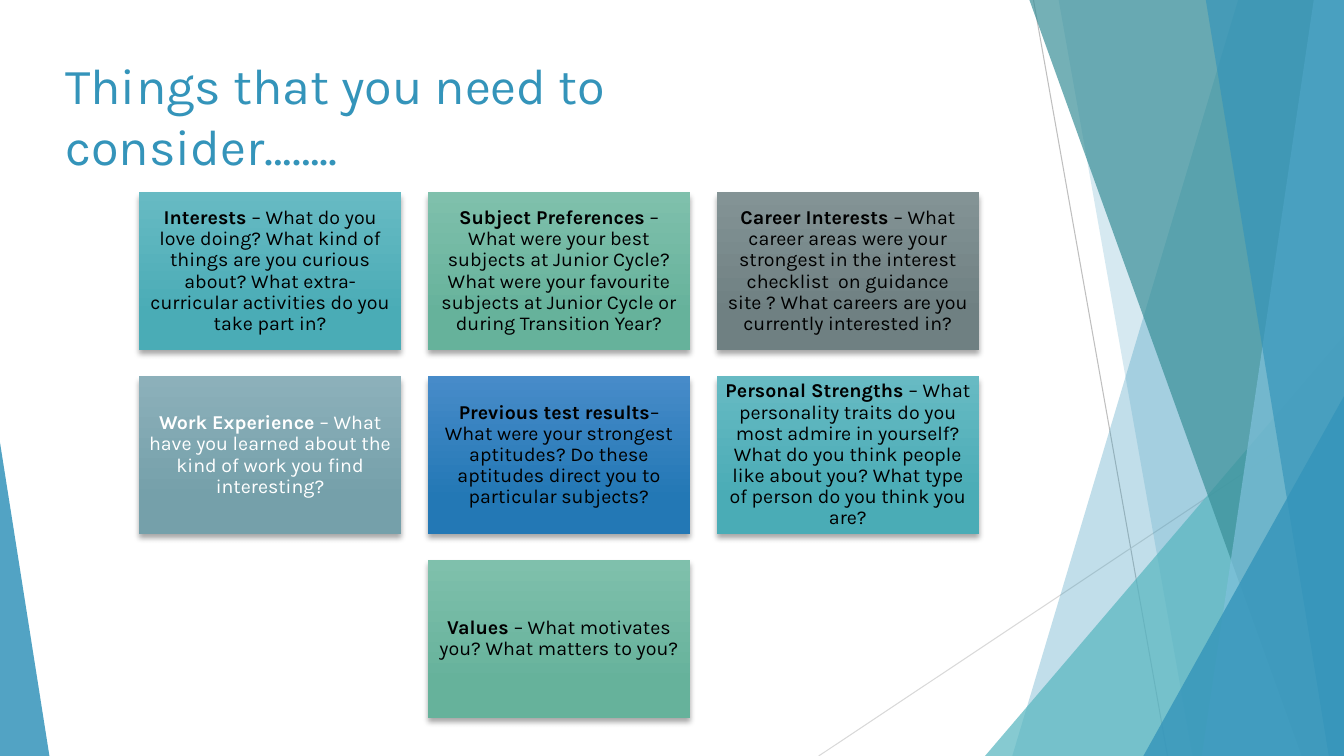
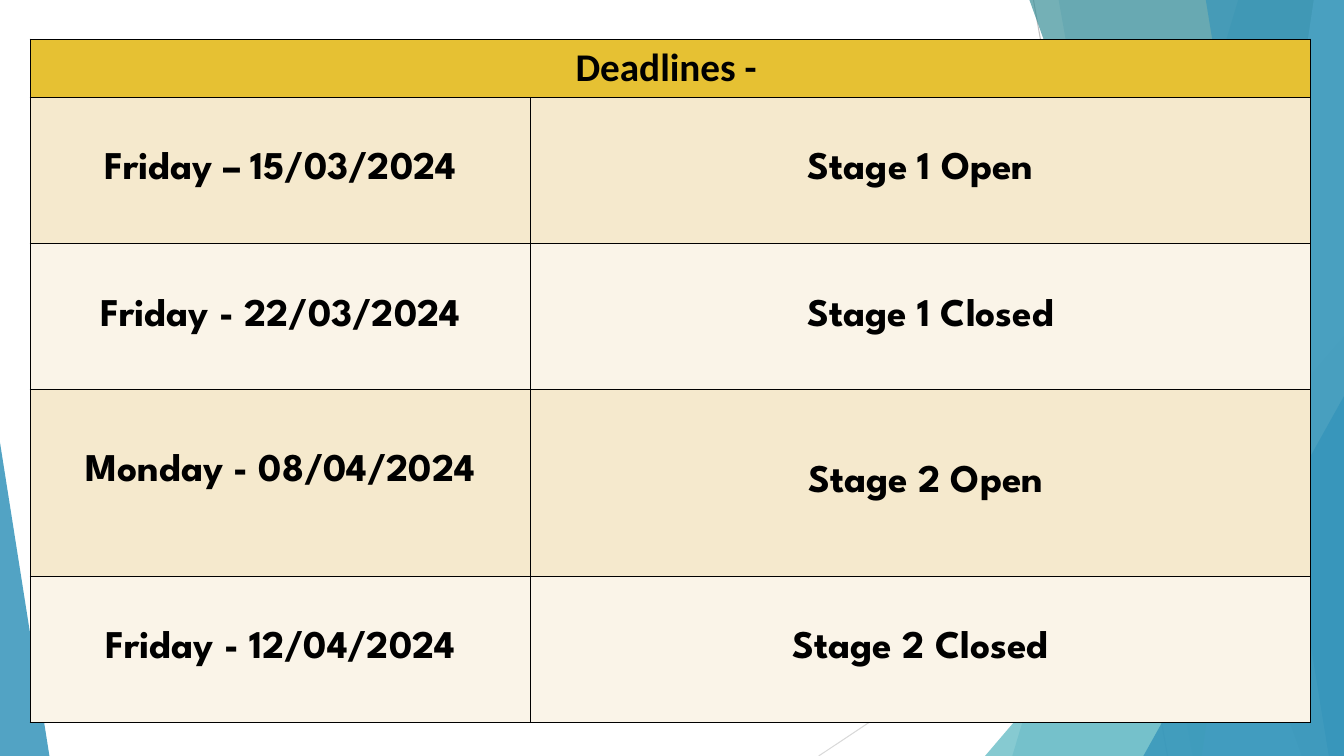
"""Build two career-planning slides: things to consider and stage deadlines."""
from lxml import etree
from pptx import Presentation
from pptx.dml.color import RGBColor
from pptx.enum.shapes import MSO_CONNECTOR, MSO_SHAPE
from pptx.enum.text import MSO_ANCHOR, PP_ALIGN
from pptx.oxml.ns import qn
from pptx.util import Inches, Pt

STRAIGHT = MSO_CONNECTOR.STRAIGHT
TRIANGLE, RECT = MSO_SHAPE.ISOSCELES_TRIANGLE, MSO_SHAPE.RECTANGLE
LEFT, CENTER = PP_ALIGN.LEFT, PP_ALIGN.CENTER
MIDDLE, BOTTOM = MSO_ANCHOR.MIDDLE, MSO_ANCHOR.BOTTOM
W, H = 13.33, 7.5

THEME = {
    "blue": "3494BA", "teal": "58B6C0", "deep": "3A8F98", "sky": "7FC1DB",
    "black": "000000", "white": "FFFFFF", "gold": "E6C133",
    "rows": ("F5E9CD", "FAF4E8"),
    "aqua_card": ("67BAC3", "4AACB6"), "green_card": ("7FC0AC", "66B29B"),
    "gray_card": ("839395", "6F8082"), "mist_card": ("8CB0BA", "75A0AA"),
    "navy_card": ("478BC9", "2378B5"),
    "title": {"name": "Karla", "size": Pt(36)},
    "card": {"name": "Karla", "size": Pt(14)},
    "head": {"name": "Calibri", "size": Pt(28)},
    "cell": {"name": "League Spartan", "size": Pt(28)},
}


def add_xml(parent, tag, **attrs):
    return etree.SubElement(parent, qn(tag), {k: str(v) for k, v in attrs.items()})


def write(tf, runs, style, color, align=CENTER, anchor=MIDDLE):
    tf.word_wrap, tf.vertical_anchor = True, anchor
    p = tf.paragraphs[0]
    p.alignment = align
    for text, bold in runs:
        r = p.add_run()
        r.text = text
        for key, value in {**THEME[style], "bold": bold}.items():
            setattr(r.font, key, value)
        r.font.color.rgb = RGBColor.from_string(THEME[color])
    return p


prs = Presentation()
prs.slide_width, prs.slide_height = Inches(W), Inches(H)
slides = [prs.slides.add_slide(prs.slide_layouts[6]) for _ in range(2)]

rays = [(10.25, 0, 11.58, H, "BFBFBF"), (W, 4.03, 8.12, H, "D9D9D9")]
facets = [
    ("band", 12.28, 10.04, "blue", 30),
    ("band", 10.5, 11.83, "blue", 20),
    ("corner", 9.77, 3.33, "teal", 72),
    ("band", 10.21, 12.91, "deep", 70),
    ("band", 13.03, 11.92, "sky", 70),
    ("band", 11.96, 13.18, "blue", 65),
    ("corner", 11.34, 3.93, "blue", 80),
    ("left", 0.49, 4.39, "blue", 85),
]
for s in slides:
    for x1, y1, x2, y2, color in rays:
        line = s.shapes.add_connector(STRAIGHT, *map(Inches, (x1, y1, x2, y2)))
        line.line.width = Pt(0.75)
        line.line.color.rgb = RGBColor.from_string(color)
        add_xml(line.element.spPr, "a:effectLst")
    for kind, a, b, color, alpha in facets:
        if kind == "band":
            outline = s.shapes.build_freeform(Inches(a), 0)
            corners = [(W, 0), (W, H), (b, H)]
            outline.add_line_segments([(Inches(x), Inches(y)) for x, y in corners])
            sp = outline.convert_to_shape()
        else:
            x, width = (a, W - a) if kind == "corner" else (0, a)
            sp = s.shapes.add_shape(TRIANGLE, *map(Inches, (x, b, width, H - b)))
            sp.adjustments[0] = 1.0 if kind == "corner" else 0.0
        sp.shadow.inherit = False
        sp.line.fill.background()
        sp.fill.solid()
        sp.fill.fore_color.rgb = RGBColor.from_string(THEME[color])
        solid = sp.element.spPr.find(qn("a:solidFill"))
        add_xml(solid[0], "a:alpha", val=alpha * 1000)

s = slides[0]
title = s.shapes.add_textbox(*map(Inches, (0.55, 0.38, 7.91, 1.41)))
write(title.text_frame, [("Things that you need to consider……..", False)],
      "title", "blue", LEFT, BOTTOM)

cards = [
    (0, 0, "aqua_card", "black", "Interests ",
     "– What do you love doing? What kind of things are you curious about? "
     "What extra-curricular activities do you take part in?"),
    (1, 0, "green_card", "black", "Subject Preferences",
     " – What were your best subjects at Junior Cycle? What were your "
     "favourite subjects at Junior Cycle or during Transition Year?"),
    (2, 0, "gray_card", "black", "Career Interests ",
     "– What career areas were your strongest in the interest checklist  on "
     "guidance site ? What careers are you currently interested in?"),
    (0, 1, "mist_card", "white", "Work Experience ",
     "– What have you learned about the kind of work you find interesting?"),
    (1, 1, "navy_card", "black", "Previous test results",
     "– What were your strongest aptitudes? Do these aptitudes direct you to "
     "particular subjects?"),
    (2, 1, "aqua_card", "black", "Personal Strengths ",
     "– What personality traits do you most admire in yourself? What do you "
     "think people like about you? What type of person do you think you are?"),
    (1, 2, "green_card", "black", "Values ",
     "– What motivates you? What matters to you?"),
]
card_w, card_h, gap = 2.6, 1.56, 0.265
for col, row, fill, color, heading, body in cards:
    x, y = 1.38 + col * (card_w + gap), 1.91 + row * (card_h + gap)
    sp = s.shapes.add_shape(RECT, *map(Inches, (x, y, card_w, card_h)))
    sp.line.fill.background()
    sp.fill.gradient()
    sp.fill.gradient_angle = 270
    for stop, shade, position in zip(sp.fill.gradient_stops, THEME[fill], (0, 0.78)):
        stop.color.rgb = RGBColor.from_string(shade)
        stop.position = position
    sp.shadow.inherit = False
    effects = sp.element.spPr.find(qn("a:effectLst"))
    shadow = add_xml(effects, "a:outerShdw", blurRad=Pt(4), dist=Pt(3),
                     dir=90 * 60000, rotWithShape=0)
    add_xml(add_xml(shadow, "a:srgbClr", val=THEME["black"]), "a:alpha", val=35000)
    tf = sp.text_frame
    for side in ("left", "right", "top", "bottom"):
        setattr(tf, f"margin_{side}", Inches(0.06))
    p = write(tf, [(heading, True), (body, False)], "card", color)
    p.line_spacing = 0.9

s = slides[1]
deadlines = [
    ("Deadlines - ", ""),
    ("Friday – 15/03/2024", "Stage 1 Open"),
    ("Friday - 22/03/2024", "  Stage 1 Closed"),
    ("Monday - 08/04/2024", " Stage 2 Open"),
    ("Friday - 12/04/2024", "Stage 2 Closed"),
]
col_widths, row_heights = (4.96, 7.74), (0.57, 1.45, 1.45, 1.85, 1.45)
frame = s.shapes.add_table(len(row_heights), len(col_widths), *map(
    Inches, (0.3, 0.39, sum(col_widths), sum(row_heights))))
table = frame.table
for column, width in zip(table.columns, col_widths):
    column.width = Inches(width)
for i, (texts, height) in enumerate(zip(deadlines, row_heights)):
    table.rows[i].height = Inches(height)
    for j, text in enumerate(texts):
        cell = table.cell(i, j)
        tcPr = cell._tc.get_or_add_tcPr()
        for edge in ("a:lnL", "a:lnR", "a:lnT", "a:lnB"):
            border = add_xml(add_xml(tcPr, edge, w=Pt(1)), "a:solidFill")
            add_xml(border, "a:srgbClr", val=THEME["black"])
        cell.fill.solid()
        cell.fill.fore_color.rgb = RGBColor.from_string(
            THEME["rows"][(i - 1) % 2] if i else THEME["gold"])
        cell.vertical_anchor = MIDDLE
        if text:
            write(cell.text_frame, [(text, True)], "cell" if i else "head", "black")
table.cell(0, 0).merge(table.cell(0, 1))
table.cell(3, 0).margin_bottom = Inches(0.27)

prs.save("out.pptx")
